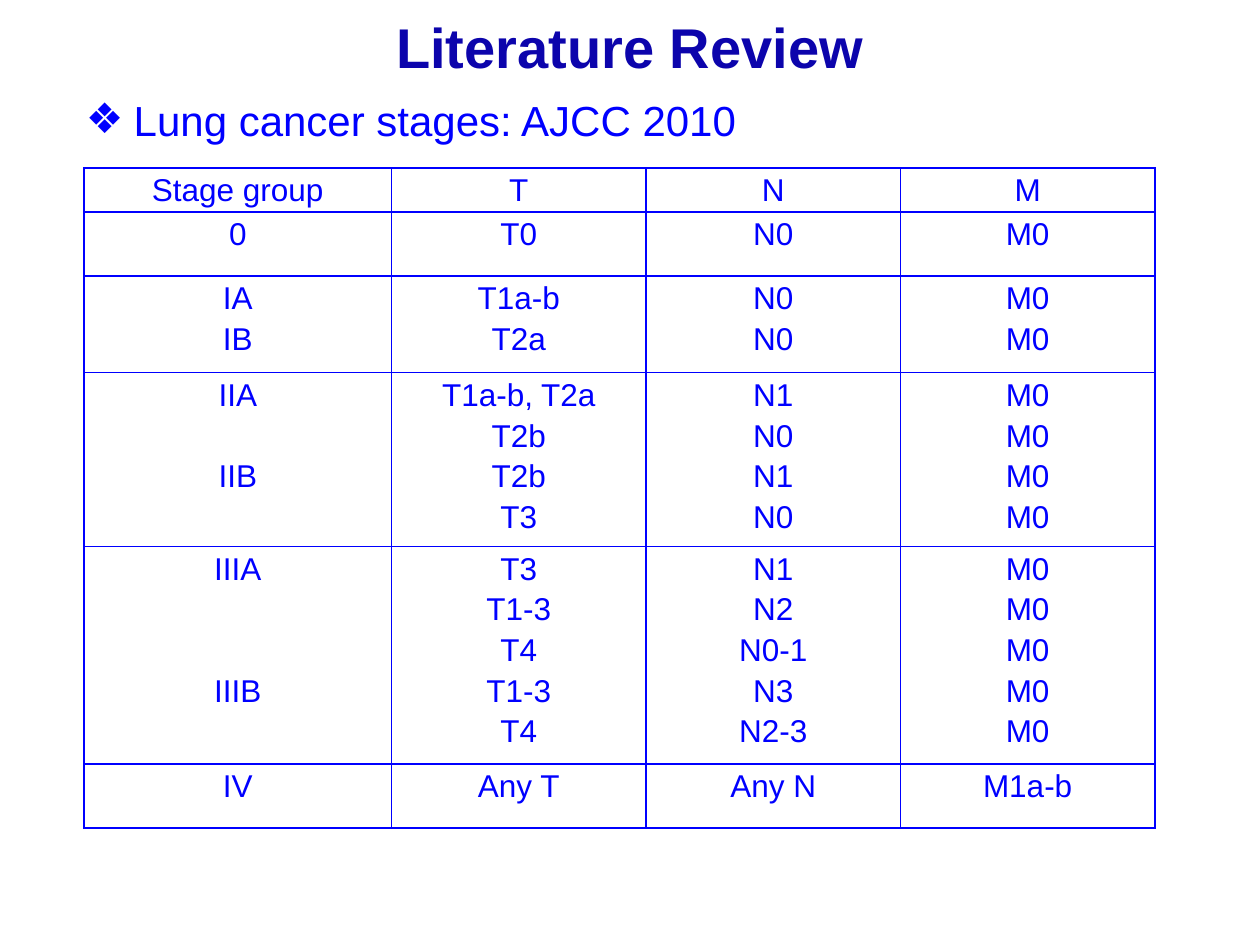
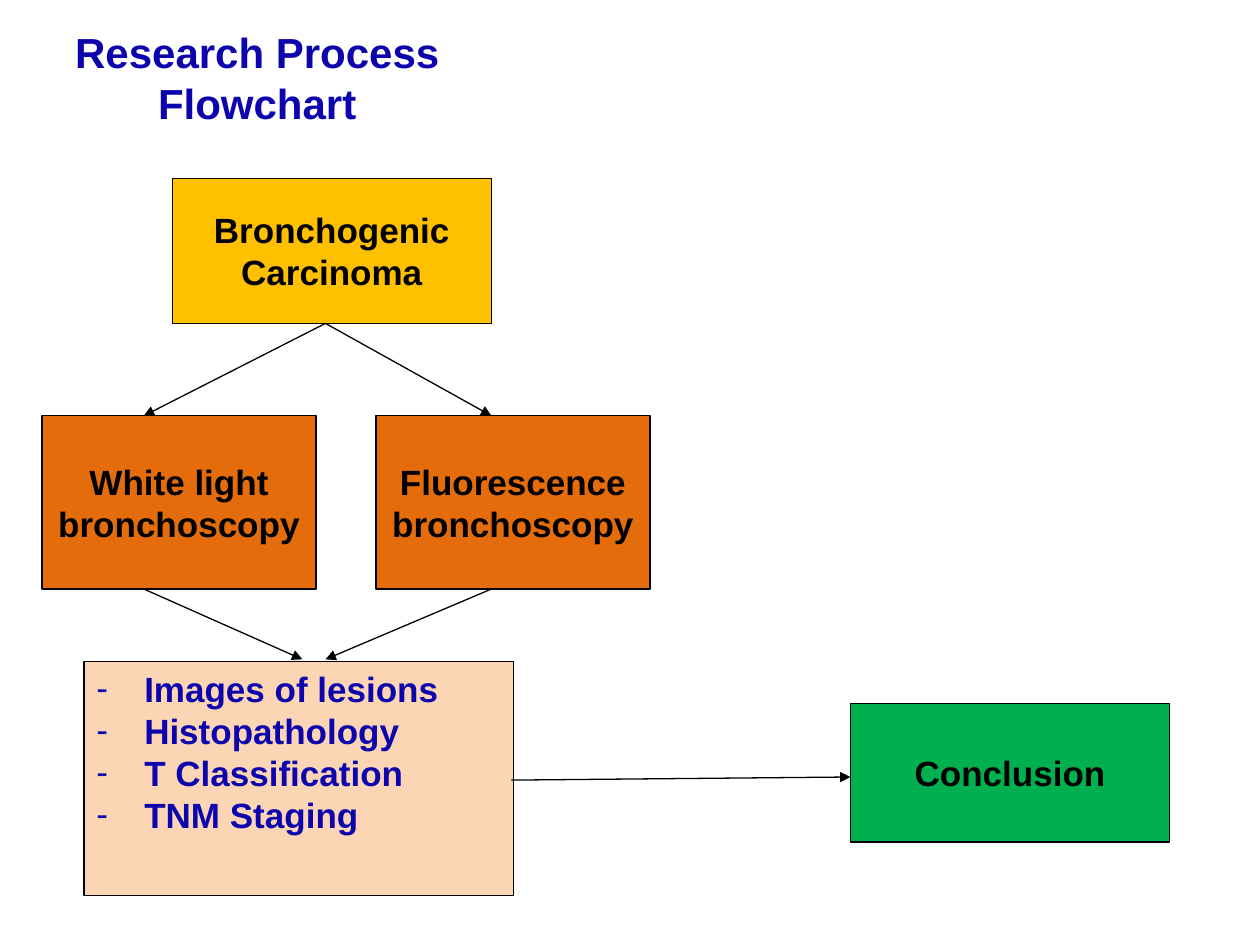
from dataclasses import dataclass

from lxml.etree import SubElement
from pptx import Presentation
from pptx.dml.color import RGBColor
from pptx.enum.shapes import MSO_CONNECTOR, MSO_SHAPE
from pptx.enum.text import MSO_ANCHOR, PP_ALIGN
from pptx.oxml import parse_xml
from pptx.oxml.ns import nsdecls, qn
from pptx.util import Inches, Pt


@dataclass(frozen=True)
class Theme:
    font: str = "Arial"
    title: str = "0C04AC"
    blue: str = "0000FF"
    black: str = "000000"
    amber: str = "FFC000"
    orange: str = "E46C0A"
    peach: str = "FCD5B5"
    green: str = "00B050"
    title_size: int = 32
    heading_size: int = 24
    box_size: int = 20
    cell_size: int = 18
    cell_line: float = 23.25
    outline: float = 0.75


THEME = Theme()
COLUMNS, ROWS = 120, 90
WIDTH, HEIGHT = Inches(10), Inches(7.5)

STAGE_HEADER = ["Stage group", "T", "N", "M"]
# Lines of a cell are parted by "|"; an empty part skips a line.
STAGES = [
    ["0", "T0", "N0", "M0"],
    ["IA|IB", "T1a-b|T2a", "N0|N0", "M0|M0"],
    ["IIA||IIB", "T1a-b, T2a|T2b|T2b|T3", "N1|N0|N1|N0", "M0|M0|M0|M0"],
    ["IIIA|||IIIB", "T3|T1-3|T4|T1-3|T4", "N1|N2|N0-1|N3|N2-3",
     "M0|M0|M0|M0|M0"],
    ["IV", "Any T", "Any N", "M1a-b"],
]
STAGE_ROWS = [4.2, 6.1, 9.2, 16.5, 20.7, 6.1]


def x(columns):
    return round(WIDTH * columns / COLUMNS)


def y(rows):
    return round(HEIGHT * rows / ROWS)


def area(left, top, width, height):
    return x(left), y(top), x(width), y(height)


def add_bullet(p, char, color):
    """Give a paragraph a hanging bullet."""
    pPr = p._p.get_or_add_pPr()
    pPr.set("marL", str(Inches(0.38)))
    pPr.set("indent", str(-Inches(0.38)))
    clr = SubElement(pPr, qn("a:buClr"))
    SubElement(clr, qn("a:srgbClr"), val=color)
    SubElement(pPr, qn("a:buFont"), typeface=THEME.font)
    SubElement(pPr, qn("a:buChar"), char=char)


def write(tf, text, size, color, bold=False, align=PP_ALIGN.CENTER,
          anchor=MSO_ANCHOR.MIDDLE, bullet=None, spacing=None):
    """Write "|"-parted lines; empty ones become space before the next."""
    tf.word_wrap = True
    tf.vertical_anchor = anchor
    skipped = 0
    for i, line in enumerate(text.split("|")):
        if not line:
            skipped += 1
            continue
        p = tf.add_paragraph() if i else tf.paragraphs[0]
        if bullet:
            add_bullet(p, bullet, color)
        p.alignment = align
        if spacing:
            p.line_spacing = spacing
        if skipped:
            p.space_before = Pt(skipped * THEME.cell_line)
            skipped = 0
        r = p.add_run()
        r.text = line
        r.font.name, r.font.size, r.font.bold = THEME.font, Pt(size), bold
        r.font.color.rgb = RGBColor.from_string(color)


def add_text(s, box, text, **fmt):
    tf = s.shapes.add_textbox(*area(*box)).text_frame
    write(tf, text, **fmt)
    return tf


def add_title(s, box, text, size):
    add_text(s, box, text, size=size, color=THEME.title, bold=True)


def add_box(s, box, text, fill, color=THEME.black, **fmt):
    sp = s.shapes.add_shape(MSO_SHAPE.RECTANGLE, *area(*box))
    sp.shadow.inherit = False
    sp.fill.solid()
    sp.fill.fore_color.rgb = RGBColor.from_string(fill)
    sp.line.color.rgb = RGBColor.from_string(THEME.black)
    sp.line.width = Pt(THEME.outline)
    write(sp.text_frame, text, THEME.box_size, color, bold=True, **fmt)


def add_arrow(s, start, end):
    cx = s.shapes.add_connector(MSO_CONNECTOR.STRAIGHT, x(start[0]),
                                y(start[1]), x(end[0]), y(end[1]))
    cx.line.color.rgb = RGBColor.from_string(THEME.black)
    cx.line.width = Pt(THEME.outline)
    SubElement(cx.line._get_or_add_ln(), qn("a:tailEnd"), type="triangle")
    SubElement(cx._element.spPr, qn("a:effectLst"))


def add_borders(cell, color):
    tcPr = cell._tc.get_or_add_tcPr()
    for i, side in enumerate(("lnL", "lnR", "lnT", "lnB")):
        tcPr.insert(i, parse_xml(
            f'<a:{side} {nsdecls("a")} w="{Pt(1)}"><a:solidFill>'
            f'<a:srgbClr val="{color}"/></a:solidFill></a:{side}>'))


def add_grid(s, box, rows, widths, heights):
    table = s.shapes.add_table(len(rows), len(widths), *area(*box)).table
    table.first_row = table.horz_banding = False
    for column, width in zip(table.columns, widths):
        column.width = x(width)
    for row, height, texts in zip(table.rows, heights, rows):
        row.height = y(height)
        for cell, text in zip(row.cells, texts):
            cell.margin_left = cell.margin_right = Inches(0.07)
            cell.margin_top = cell.margin_bottom = 0
            cell.fill.background()
            add_borders(cell, THEME.blue)
            write(cell.text_frame, text, THEME.cell_size, THEME.blue,
                  spacing=1.15, anchor=None)


def build_stages(s):
    # Heading bullet
    tf = add_text(s, (7, 8, 108, 74), "Lung cancer stages: AJCC 2010",
                  size=THEME.heading_size, color=THEME.blue, bullet="❖",
                  align=PP_ALIGN.LEFT, anchor=MSO_ANCHOR.TOP)
    tf.margin_top = Inches(0.08)
    # Staging table: one wide column, the rest equal
    first = 29.3
    add_grid(s, (8, 16, 102, sum(STAGE_ROWS)), [STAGE_HEADER] + STAGES,
             [first] + [(102 - first) / 3] * 3, STAGE_ROWS)
    add_title(s, (5, 0.4, 110, 8), "Literature Review", THEME.title_size)


def build_flowchart(s):
    split, left, right = 31, 13.7, 46.8
    source_end, method_top, method_height = 30.8, 39.6, 16.5
    method_end = method_top + method_height
    # Arrows from the disease to both methods
    for target in (left, right):
        add_arrow(s, (split, source_end), (target, method_top))
    # Boxes
    add_box(s, (16.4, 17, 30.4, 13.8), "Bronchogenic Carcinoma", THEME.amber)
    for start, name in ((4, "White light"), (35.8, "Fluorescence")):
        add_box(s, (start, method_top, 26.1, method_height),
                f"{name} bronchoscopy", THEME.orange)
    add_box(s, (8, 63, 40.9, 22.3),
            "Images of lesions|Histopathology|T Classification|TNM Staging",
            THEME.peach, color=THEME.title, align=PP_ALIGN.LEFT,
            anchor=MSO_ANCHOR.TOP, bullet="-")
    add_box(s, (81, 67, 30.4, 13.2), "Conclusion", THEME.green)
    # Arrows to the findings and the conclusion
    add_arrow(s, (left, method_end), (28.8, 62.8))
    add_arrow(s, (right, method_end), (split, 62.8))
    add_arrow(s, (48.7, 74.3), (81, 74))
    add_title(s, (5, 1.9, 39, 10.9), "Research Process Flowchart",
              THEME.heading_size)


def main():
    prs = Presentation()
    prs.slide_width, prs.slide_height = WIDTH, HEIGHT
    for build in (build_stages, build_flowchart):
        build(prs.slides.add_slide(prs.slide_layouts[6]))
    prs.save("out.pptx")


if __name__ == "__main__":
    main()
